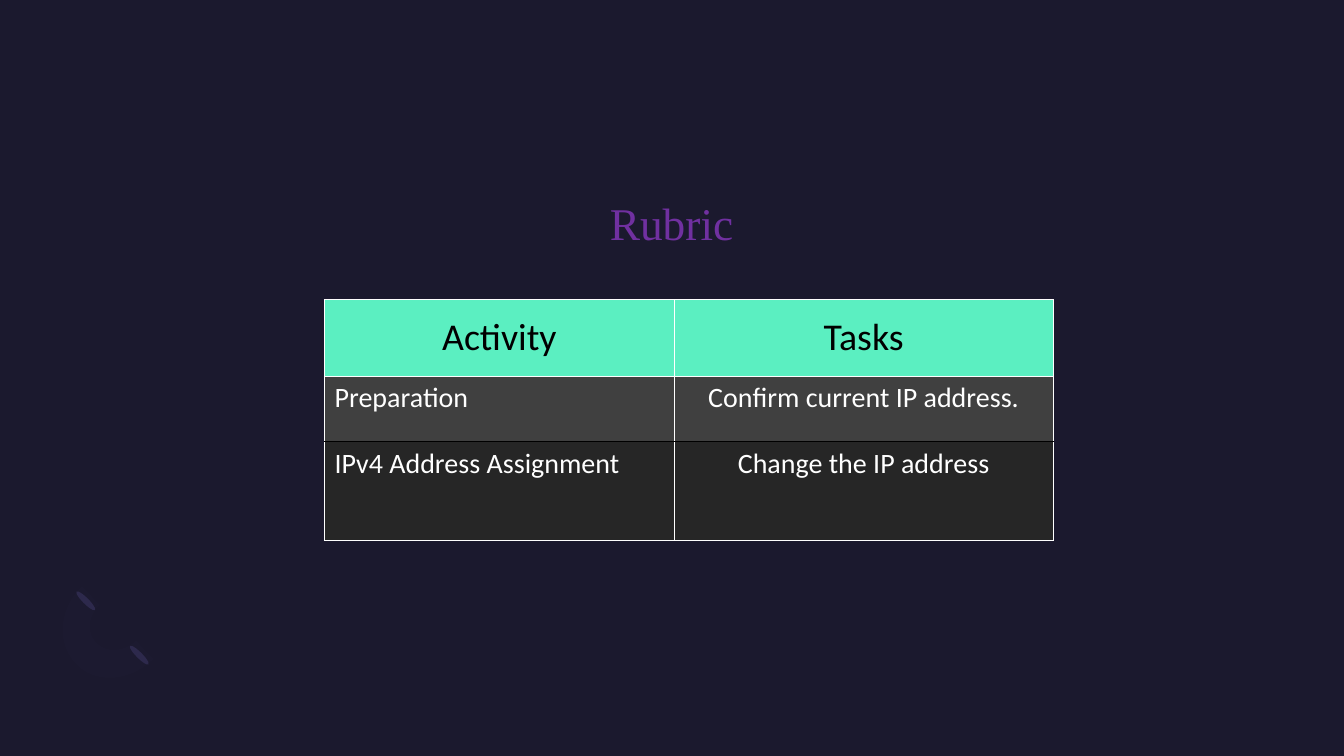
from lxml import etree
from pptx import Presentation
from pptx import util as u
from pptx.dml.color import RGBColor
from pptx.enum import shapes, text
from pptx.oxml.ns import qn

# Content
TITLE = "Rubric"
ROWS = [
    ("Activity", "Tasks"),
    ("Preparation", "Confirm current IP address."),
    ("IPv4 Address Assignment", "Change the IP address"),
]
COLORS = {
    "background": "1B192E", "title": "7030A0", "black": "000000",
    "white": "FFFFFF", "header": "5BEFC1", "odd": "404040",
    "even": "262626", "dash": "2C284A", "arc": "7771B2",
}
ROW_FILLS = ["header", "odd", "even"]

# Layout in centimetres
TITLE_BOX = (11.73, 4.93, 10.39, 1.68)
TABLE_ORIGIN = (8.18, 7.55)
COLUMN_WIDTHS = [8.81, 9.55]
ROW_HEIGHTS = [1.93, 1.65, 2.49]
DASH_SIZE = (0.15, 0.66)
DASH_CENTERS = [(2.16, 15.14), (3.51, 16.51)]
ARC_START = (1.93, 16.74)
ARC_SEGMENTS = [
    [(1.42, 16.23), (1.47, 15.37), (2.06, 14.78)],
    [(2.51, 15.24)],
    [(2.21, 15.52), (2.18, 15.98), (2.44, 16.21)],
    [(2.69, 16.46), (3.12, 16.43), (3.43, 16.15)],
    [(3.86, 16.61)],
    [(3.3, 17.17), (2.41, 17.25), (1.93, 16.74)],
]
CURVE_STEPS = 12


def rgb(name):
    return RGBColor.from_string(COLORS[name])


def write(frame, content, size, font, color, align=text.PP_ALIGN.LEFT,
          margins=(0, 0, 0, 0), before=0):
    """Put one formatted paragraph in a text frame."""
    frame.word_wrap = True
    (frame.margin_left, frame.margin_top,
     frame.margin_right, frame.margin_bottom) = map(u.Cm, margins)
    paragraph = frame.paragraphs[0]
    paragraph.alignment = align
    paragraph.space_before = u.Pt(before)
    run = paragraph.add_run()
    run.text = content
    run.font.size = u.Pt(size)
    run.font.name = font
    run.font.color.rgb = rgb(color)


def paint(shape, color):
    shape.shadow.inherit = False
    shape.fill.solid()
    shape.fill.fore_color.rgb = rgb(color)
    shape.line.fill.background()


def set_border(cell, side, color):
    properties = cell._tc.get_or_add_tcPr()
    line = etree.Element(qn(f"a:{side}"), w=str(u.Pt(1)))
    fill = etree.SubElement(line, qn("a:solidFill"))
    etree.SubElement(fill, qn("a:srgbClr"), val=COLORS[color])
    properties.insert(0, line)


def curve_points(start, first, second, end):
    """Points along a cubic curve."""
    for step in range(1, CURVE_STEPS + 1):
        t = step / CURVE_STEPS
        weights = ((1 - t) ** 3, 3 * t * (1 - t) ** 2, 3 * t ** 2 * (1 - t), t ** 3)
        yield tuple(sum(w * point[axis] for w, point in
                        zip(weights, (start, first, second, end)))
                    for axis in (0, 1))


def add_ornament(slide):
    # Two slanted dashes
    width, height = DASH_SIZE
    for x, y in DASH_CENTERS:
        dash = slide.shapes.add_shape(
            shapes.MSO_SHAPE.OVAL, u.Cm(x - width / 2), u.Cm(y - height / 2),
            u.Cm(width), u.Cm(height))
        dash.rotation = 135
        paint(dash, "dash")

    # Faint arc
    points = [ARC_START]
    for segment in ARC_SEGMENTS:
        points += segment if len(segment) == 1 else curve_points(points[-1], *segment)
    outline = [(u.Cm(x), u.Cm(y)) for x, y in points]
    builder = slide.shapes.build_freeform(*outline[0])
    builder.add_line_segments(outline[1:], close=True)
    arc = builder.convert_to_shape()
    paint(arc, "arc")
    color = arc.fill._xPr.find(".//" + qn("a:srgbClr"))
    etree.SubElement(color, qn("a:alpha"), val="2000")


def add_rubric_table(slide):
    table = slide.shapes.add_table(
        len(ROWS), len(COLUMN_WIDTHS), *map(u.Cm, TABLE_ORIGIN),
        u.Cm(sum(COLUMN_WIDTHS)), u.Cm(sum(ROW_HEIGHTS))).table
    for column, width in zip(table.columns, COLUMN_WIDTHS):
        column.width = u.Cm(width)
    for row, height in zip(table.rows, ROW_HEIGHTS):
        row.height = u.Cm(height)

    for r, labels in enumerate(ROWS):
        header = r == 0
        for c, label in enumerate(labels):
            cell = table.cell(r, c)
            cell.fill.solid()
            cell.fill.fore_color.rgb = rgb(ROW_FILLS[r])
            cell.vertical_anchor = (text.MSO_ANCHOR.MIDDLE if header
                                    else text.MSO_ANCHOR.TOP)
            centered = header or c == 1
            write(cell.text_frame, label, 27 if header else 20, "Calibri",
                  "black" if header else "white",
                  align=text.PP_ALIGN.CENTER if centered else text.PP_ALIGN.LEFT,
                  margins=(0.43, 0.43, 0.43, 0.2))
            if not header:
                set_border(cell, "lnB" if r == 1 else "lnT", "black")
            for run in cell.text_frame.paragraphs[0].runs:
                run.font.bold = False


def main():
    presentation = Presentation()
    presentation.slide_width, presentation.slide_height = u.Cm(33.87), u.Cm(19.05)
    slide = presentation.slides.add_slide(presentation.slide_layouts[6])
    slide.background.fill.solid()
    slide.background.fill.fore_color.rgb = rgb("background")

    add_ornament(slide)
    title = slide.shapes.add_textbox(*map(u.Cm, TITLE_BOX))
    write(title.text_frame, TITLE, 32.4, "Times New Roman", "title",
          align=text.PP_ALIGN.CENTER, before=4)
    add_rubric_table(slide)
    presentation.save("out.pptx")


if __name__ == "__main__":
    main()
